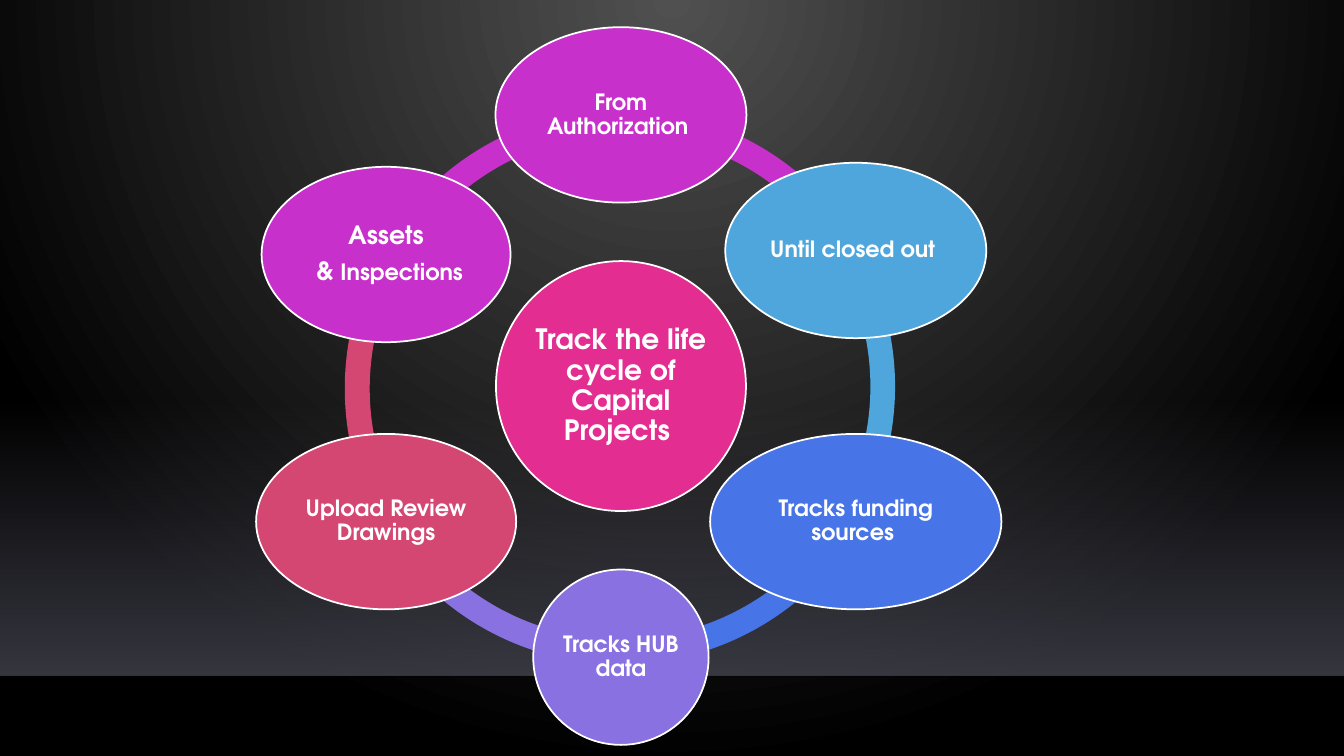
from dataclasses import dataclass
from math import cos, radians, sin

from lxml.etree import SubElement
from pptx import Presentation
from pptx.dml.color import RGBColor
from pptx.enum.shapes import MSO_CONNECTOR, MSO_SHAPE
from pptx.enum.text import MSO_ANCHOR, PP_ALIGN
from pptx.oxml.ns import qn
from pptx.util import Inches, Pt


@dataclass(frozen=True)
class Theme:
    font: str = "TeX Gyre Adventor"
    white: str = "FFFFFF"
    glow: str = "505050"
    black: str = "000000"
    floor: str = "454551"
    edge: str = "000001"
    pink: str = "E32D91"
    magenta: str = "C830CC"
    sky: str = "4EA6DC"
    blue: str = "4775E7"
    violet: str = "8971E1"
    rose: str = "D54773"
    hub_size: int = 20
    lead_size: int = 18
    stage_size: int = 16
    outline: float = 1.25


@dataclass(frozen=True)
class Stage:
    lines: list
    width: float
    color: str
    arc_left: float = 34
    arc_top: float = 10.8
    arc_width: float = 55.1
    drop: float = 0


class Canvas:
    cell = 0.1
    columns, rows = 133.33, 75

    def __init__(self, prs, theme):
        self.theme = theme
        prs.slide_width = self.span(self.columns)
        prs.slide_height = self.span(self.rows)
        self.s = prs.slides.add_slide(prs.slide_layouts[6])

    def span(self, cells):
        return Inches(cells * self.cell)

    def gradient(self, props, stops):
        blank = props.find(qn("a:noFill"))
        grad = SubElement(props, qn("a:gradFill"), rotWithShape="1")
        props.replace(blank, grad)
        gs_lst = SubElement(grad, qn("a:gsLst"))
        for pos, color, alpha in stops:
            gs = SubElement(gs_lst, qn("a:gs"), pos=str(pos * 1000))
            clr = SubElement(gs, qn("a:srgbClr"), val=color)
            if alpha < 100:
                SubElement(clr, qn("a:alpha"), val=str(alpha * 1000))
        return grad

    def backdrop(self):
        self.s.background.fill.background()
        props = self.s.element.find(".//" + qn("p:bgPr"))
        grad = self.gradient(props, [(0, self.theme.glow, 100), (100, self.theme.black, 100)])
        path = SubElement(grad, qn("a:path"), path="circle")
        SubElement(path, qn("a:fillToRect"), l="43000", t="0", r="43000", b="100000")

    def shape(self, kind, left, top, width, height):
        sp = self.s.shapes.add_shape(kind, *map(self.span, (left, top, width, height)))
        sp.shadow.inherit = False
        sp.line.fill.background()
        return sp

    def floor(self, top, height):
        sp = self.shape(MSO_SHAPE.RECTANGLE, 0, top, self.columns, height)
        sp.fill.background()
        color = self.theme.floor
        grad = self.gradient(sp.element.spPr, [(0, color, 0), (100, color, 80)])
        SubElement(grad, qn("a:lin"), ang="5400000", scaled="0")

    def horizon(self, y):
        line = self.s.shapes.add_connector(
            MSO_CONNECTOR.STRAIGHT, 0, self.span(y), self.span(self.columns), self.span(y))
        line.line.color.rgb = RGBColor.from_string(self.theme.edge)
        line.line.width = Pt(1)
        props = line.element.spPr
        SubElement(props.find(".//" + qn("a:srgbClr")), qn("a:alpha"), val="20000")
        SubElement(props, qn("a:effectLst"))

    def arc(self, left, top, width, height, start, sweep, color):
        sp = self.shape(MSO_SHAPE.BLOCK_ARC, left, top, width, height)
        sp.fill.solid()
        sp.fill.fore_color.rgb = RGBColor.from_string(color)
        for i, value in enumerate((start % 360 * 0.6, (start + sweep) % 360 * 0.6, 0.045)):
            sp.adjustments[i] = value

    def bubble(self, x, y, width, height, color, lines):
        sp = self.shape(MSO_SHAPE.OVAL, x - width / 2, y - height / 2, width, height)
        sp.fill.solid()
        sp.fill.fore_color.rgb = RGBColor.from_string(color)
        sp.line.color.rgb = RGBColor.from_string(self.theme.white)
        sp.line.width = Pt(self.theme.outline)
        tf = sp.text_frame
        tf.word_wrap = True
        tf.vertical_anchor = MSO_ANCHOR.MIDDLE
        tf.margin_left = tf.margin_right = tf.margin_top = tf.margin_bottom = self.span(0.2)
        for i, runs in enumerate(lines):
            p = tf.add_paragraph() if i else tf.paragraphs[0]
            p.alignment = PP_ALIGN.CENTER
            p.line_spacing = 0.9
            p.space_after = Pt(runs[0][1] * 0.35)
            p.font.name = self.theme.font
            p.font.bold = True
            p.font.color.rgb = RGBColor.from_string(self.theme.white)
            for text, size in runs:
                r = p.add_run()
                r.text = text
                r.font.size = Pt(size)


def main():
    theme = Theme()
    prs = Presentation()
    canvas = Canvas(prs, theme)
    canvas.backdrop()
    canvas.floor(39.6, 27.4)
    canvas.horizon(67.1)

    small, lead = theme.stage_size, theme.lead_size
    stages = [
        Stage([[("From Authorization ", small)]], 24.9, theme.magenta),
        Stage([[("Until closed out ", small)]], 25.9, theme.sky, 34.3, arc_width=54.5),
        Stage([[("Tracks funding sources ", small)]], 28.9, theme.blue),
        Stage([[("Tracks HUB data", small)]], 17.4, theme.violet),
        Stage([[("Upload Review Drawings", small)]], 25.8, theme.rose, 34.2, 11),
        Stage([[("Assets", lead)], [(" & ", lead), ("Inspections", small)]],
              24.7, theme.magenta, 34.3, drop=0.4),
    ]
    center_x, center_y, radius = 61.6, 38.3, 26.9
    sweep = 360 / len(stages)
    ring = [(270 + i * sweep, stage) for i, stage in enumerate(stages)]

    for angle, stage in reversed(ring):
        canvas.arc(stage.arc_left, stage.arc_top, stage.arc_width, 55.1,
                   angle, sweep, stage.color)
    canvas.bubble(center_x, center_y, 24.8, 24.8, theme.pink,
                  [[("Track the life cycle of Capital Projects ", theme.hub_size)]])
    for angle, stage in ring:
        canvas.bubble(center_x + radius * cos(radians(angle)),
                      center_y + radius * sin(radians(angle)) + stage.drop,
                      stage.width, 17.4, stage.color, stage.lines)
    prs.save("out.pptx")


if __name__ == "__main__":
    main()
